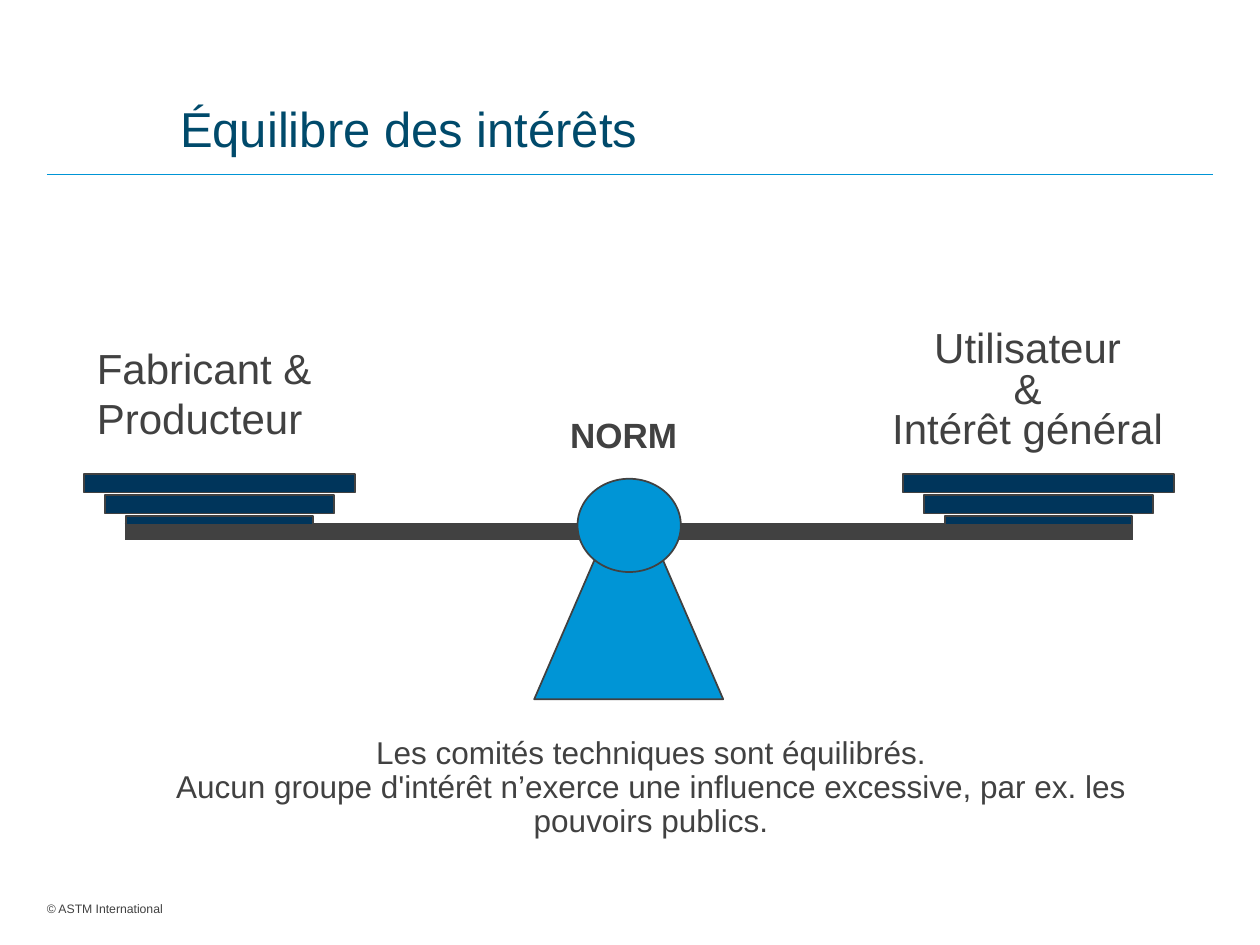
"""Build the slide on the balance of interests, drawn as a pair of scales."""
from lxml import etree
from pptx import Presentation
from pptx.dml.color import RGBColor
from pptx.enum.shapes import MSO_CONNECTOR, MSO_SHAPE
from pptx.enum.text import MSO_ANCHOR, MSO_AUTO_SIZE, PP_ALIGN
from pptx.oxml.ns import qn
from pptx.util import Inches, Pt

STRAIGHT = MSO_CONNECTOR.STRAIGHT
RECTANGLE, OVAL = MSO_SHAPE.RECTANGLE, MSO_SHAPE.OVAL
TOP, MIDDLE = MSO_ANCHOR.TOP, MSO_ANCHOR.MIDDLE
GROW, FIXED = MSO_AUTO_SIZE.SHAPE_TO_FIT_TEXT, MSO_AUTO_SIZE.NONE
LEFT, CENTER = PP_ALIGN.LEFT, PP_ALIGN.CENTER

THEME = {
    "font": "Arial",
    "ink": RGBColor.from_string("414141"),
    "navy": RGBColor.from_string("00355B"),
    "blue": RGBColor.from_string("0095D6"),
    "title": RGBColor.from_string("004A6B"),
    "title_size": Pt(28),
    "label_size": Pt(24),
    "pivot_size": Pt(20),
    "body_size": Pt(18),
    "footer_size": Pt(7),
}

deck = Presentation()
deck.slide_width, deck.slide_height = Inches(10), Inches(7.5)
page = deck.slides.add_slide(deck.slide_layouts[6])
COLUMN, ROW = deck.slide_width / 60, deck.slide_height / 45


def place(left, top, width, height):
    return [round(left * COLUMN), round(top * ROW), round(width * COLUMN), round(height * ROW)]


def paint(shape, fill):
    shape.shadow.inherit = False
    shape.fill.solid()
    shape.fill.fore_color.rgb = fill
    shape.line.color.rgb = THEME["ink"]
    shape.line.width = Pt(1)


RULES = [
    (2.23, 57.77, 8.32, "blue", 0.5),
    (5.94, 53.94, 25.3, "ink", 10),
]
for start, end, row, color, weight in RULES:
    x_start, y, x_end, _ = place(start, row, end, row)
    rule = page.shapes.add_connector(STRAIGHT, x_start, y, x_end, y)
    rule.line.color.rgb = THEME[color]
    rule.line.width = Pt(weight)
    etree.SubElement(rule._element.spPr, qn("a:effectLst"))

stand_points = [(28.92, 25.26), (25.44, 33.3), (34.44, 33.3), (30.96, 25.26)]
corners = [(round(x * COLUMN), round(y * ROW)) for x, y in stand_points]
outline = page.shapes.build_freeform(*corners[0])
outline.add_line_segments(corners[1:], close=True)
paint(outline.convert_to_shape(), THEME["blue"])

for pan_left in (4, 43):
    for step, thickness in enumerate((0.9, 0.9, 0.42)):
        box = place(pan_left + step, 22.56 + step, 12.9 - 2 * step, thickness)
        paint(page.shapes.add_shape(RECTANGLE, *box), THEME["navy"])

paint(page.shapes.add_shape(OVAL, *place(27.5, 22.8, 4.92, 4.44)), THEME["blue"])

TEXTS = [
    {"box": (8.58, 2, 50.4, 8.5), "text": "Équilibre des intérêts",
     "frame": {"word_wrap": True, "auto_size": FIXED, "vertical_anchor": MIDDLE},
     "margins": (0, 0), "para": {"alignment": LEFT, "line_spacing": Pt(30)},
     "size": "title_size", "color": "title", "bold": False},
    {"box": (4.02, 16, 15.06, 5.46), "text": "Fabricant &\nProducteur",
     "frame": {"word_wrap": False, "auto_size": GROW, "vertical_anchor": TOP},
     "margins": (0.1, 0.05), "para": {"alignment": LEFT},
     "size": "label_size", "color": "ink", "bold": False},
    {"box": (41.07, 15.5, 15.72, 6.42), "text": "Utilisateur\n&\nIntérêt général",
     "frame": {"word_wrap": False, "auto_size": GROW, "vertical_anchor": TOP},
     "margins": (0.1, 0.05), "para": {"alignment": CENTER, "line_spacing": 0.8},
     "size": "label_size", "color": "ink", "bold": False},
    {"box": (26.2, 19.38, 7, 2.64), "text": "NORM",
     "frame": {"word_wrap": False, "auto_size": GROW, "vertical_anchor": TOP},
     "margins": (0.1, 0.05), "para": {"alignment": CENTER},
     "size": "pivot_size", "color": "ink", "bold": True},
    {"box": (5, 34.8, 52, 3.9),
     "text": "Les comités techniques sont équilibrés.\n"
             "Aucun groupe d'intérêt n’exerce une influence excessive, "
             "par ex. les pouvoirs publics.",
     "frame": {"word_wrap": True, "auto_size": GROW, "vertical_anchor": TOP},
     "margins": (0.1, 0.05), "para": {"alignment": CENTER, "line_spacing": 0.9},
     "size": "body_size", "color": "ink", "bold": False},
    {"box": (2.23, 42.9, 6.8, 0.72), "text": "© ASTM International",
     "frame": {"word_wrap": True, "auto_size": GROW, "vertical_anchor": TOP},
     "margins": (0, 0), "para": {"alignment": LEFT},
     "size": "footer_size", "color": "ink", "bold": False},
]
for item in TEXTS:
    frame = page.shapes.add_textbox(*place(*item["box"])).text_frame
    side, end = map(Inches, item["margins"])
    margins = {"margin_left": side, "margin_right": side, "margin_top": end, "margin_bottom": end}
    for name, value in {**item["frame"], **margins}.items():
        setattr(frame, name, value)
    frame.text = item["text"]
    font_values = {"name": THEME["font"], "size": THEME[item["size"]], "bold": item["bold"]}
    for para in frame.paragraphs:
        for name, value in item["para"].items():
            setattr(para, name, value)
        for span in para.runs:
            for name, value in font_values.items():
                setattr(span.font, name, value)
            span.font.color.rgb = THEME[item["color"]]

deck.save("out.pptx")
